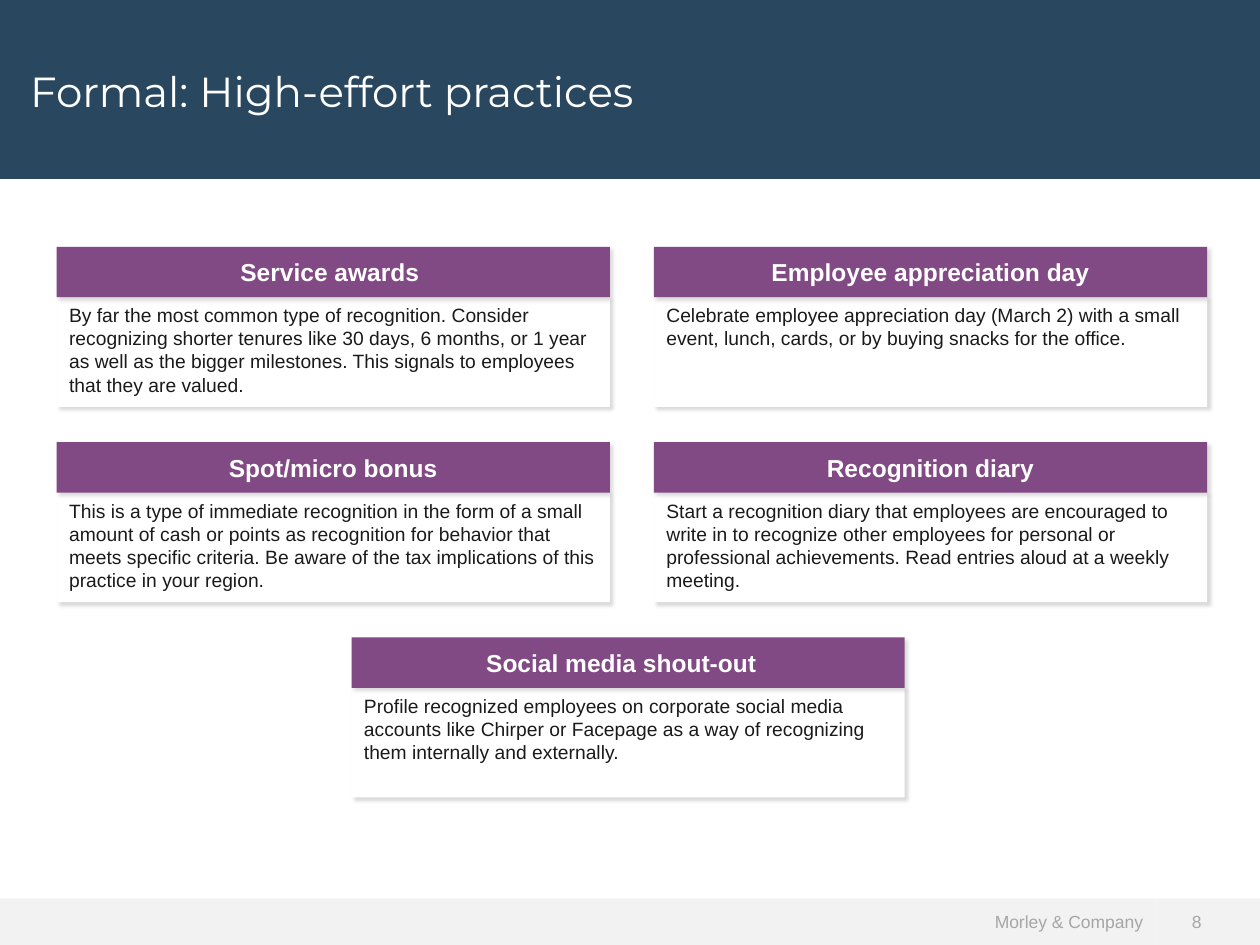
"""Build the slide on formal, high-effort recognition practices."""
import lxml.etree
import pptx
import pptx.dml.color
import pptx.enum.shapes
import pptx.enum.text
import pptx.oxml
import pptx.oxml.ns
import pptx.util

Inches = pptx.util.Inches
ALIGN = pptx.enum.text.PP_ALIGN
ANCHOR = pptx.enum.text.MSO_ANCHOR

TITLE = "Formal: High-effort practices"
OWNER = "Morley & Company"
PAGE = "8"
CARDS = [
    ("Service awards\u00a0",
     "By far the most common type of recognition. Consider recognizing shorter "
     "tenures like 30 days, 6 months, or 1 year as well as the bigger milestones. "
     "This signals to employees that they are valued."),
    ("Employee appreciation day",
     "Celebrate employee appreciation day (March 2) with a small event, lunch, "
     "cards, or by buying snacks for the office."),
    ("Spot/micro bonus",
     "This is a type of immediate recognition in the form of a small amount of cash "
     "or points as recognition for behavior that meets specific criteria. Be aware "
     "of the tax implications of this practice in your region."),
    ("Recognition diary",
     "Start a recognition diary that employees are encouraged to write in to "
     "recognize other employees for personal or professional achievements. Read "
     "entries aloud at a weekly meeting."),
    ("Social media shout-out\u00a0\u00a0",
     "Profile recognized employees on corporate social media accounts like Chirper "
     "or Facepage as a way of recognizing them internally and externally."),
]

COLORS = {"navy": "29475F", "plum": "824A85", "white": "FFFFFF",
          "pale": "F2F2F2", "gray": "A6A6A6", "ink": "1A1A1A"}
STYLES = {
    "title": {"fill": "navy", "color": "white", "align": ALIGN.LEFT,
              "font": {"name": "Montserrat", "size": pptx.util.Pt(24)},
              "frame": {"margin_left": Inches(0.24), "margin_top": Inches(0.52),
                        "vertical_anchor": ANCHOR.TOP}},
    "head": {"fill": "plum", "color": "white", "align": ALIGN.CENTER, "shadow": True,
             "font": {"name": "Arial", "size": pptx.util.Pt(14), "bold": True},
             "frame": {"vertical_anchor": ANCHOR.MIDDLE}},
    "body": {"fill": "white", "color": "ink", "align": ALIGN.LEFT, "shadow": True,
             "font": {"name": "Arial", "size": pptx.util.Pt(11)},
             "frame": {"vertical_anchor": ANCHOR.TOP}},
    "owner": {"fill": "pale", "color": "gray", "align": ALIGN.RIGHT,
              "font": {"name": "Arial", "size": pptx.util.Pt(10)},
              "frame": {"vertical_anchor": ANCHOR.MIDDLE}},
    "page": {"fill": "pale", "color": "gray", "align": ALIGN.LEFT,
             "font": {"name": "Arial", "size": pptx.util.Pt(10)},
             "frame": {"vertical_anchor": ANCHOR.MIDDLE, "margin_left": Inches(0.29)}},
}
SHADOW = ('<a:outerShdw xmlns:a="http://schemas.openxmlformats.org/drawingml/2006/main" '
          'blurRad="25400" dist="25400" dir="2700000" algn="tl" rotWithShape="0">'
          '<a:srgbClr val="000000"><a:alpha val="15000"/></a:srgbClr></a:outerShdw>')

LEFT, TOP = 0.45, 1.96
WIDTH, HEAD, BODY = 4.39, 0.4, 0.87
STEP_X, STEP_Y = 4.74, 1.55
LAST_X = 2.79


def tint(name):
    """Return the named color."""
    return pptx.dml.color.RGBColor.from_string(COLORS[name])


def assign(target, values):
    """Set each value on the target."""
    for name, value in values.items():
        setattr(target, name, value)


def add_box(slide, kind, text, *place):
    """Add one filled box with styled text."""
    style = STYLES[kind]
    box = slide.shapes.add_shape(
        pptx.enum.shapes.MSO_SHAPE.RECTANGLE, *map(Inches, place))
    box.fill.solid()
    box.fill.fore_color.rgb = tint(style["fill"])
    box.line.fill.background()
    box.shadow.inherit = False
    if style.get("shadow"):
        effects = box._element.spPr.find(pptx.oxml.ns.qn("a:effectLst"))
        effects.append(lxml.etree.fromstring(SHADOW))
    frame = box.text_frame
    frame.word_wrap = True
    assign(frame, style["frame"])
    line = frame.paragraphs[0]
    line.alignment = style["align"]
    run = line.add_run()
    run.text = text
    assign(run.font, style["font"])
    run.font.color.rgb = tint(style["color"])


def main():
    """Build and save the slide."""
    deck = pptx.Presentation()
    assign(deck, {"slide_width": Inches(10), "slide_height": Inches(7.5)})
    slide = deck.slides.add_slide(deck.slide_layouts[6])
    add_box(slide, "owner", OWNER, 0, 7.13, 9.17, 0.37)
    add_box(slide, "page", PAGE, 9.17, 7.13, 0.83, 0.37)
    add_box(slide, "title", TITLE, 0, 0, 10, 1.42)
    for index, (head, body) in enumerate(CARDS):
        row, col = divmod(index, 2)
        left = LAST_X if index == len(CARDS) - 1 else LEFT + col * STEP_X
        top = TOP + row * STEP_Y
        add_box(slide, "body", body, left, top + HEAD, WIDTH, BODY)
        add_box(slide, "head", head, left, top, WIDTH, HEAD)
    deck.save("out.pptx")


if __name__ == "__main__":
    main()
